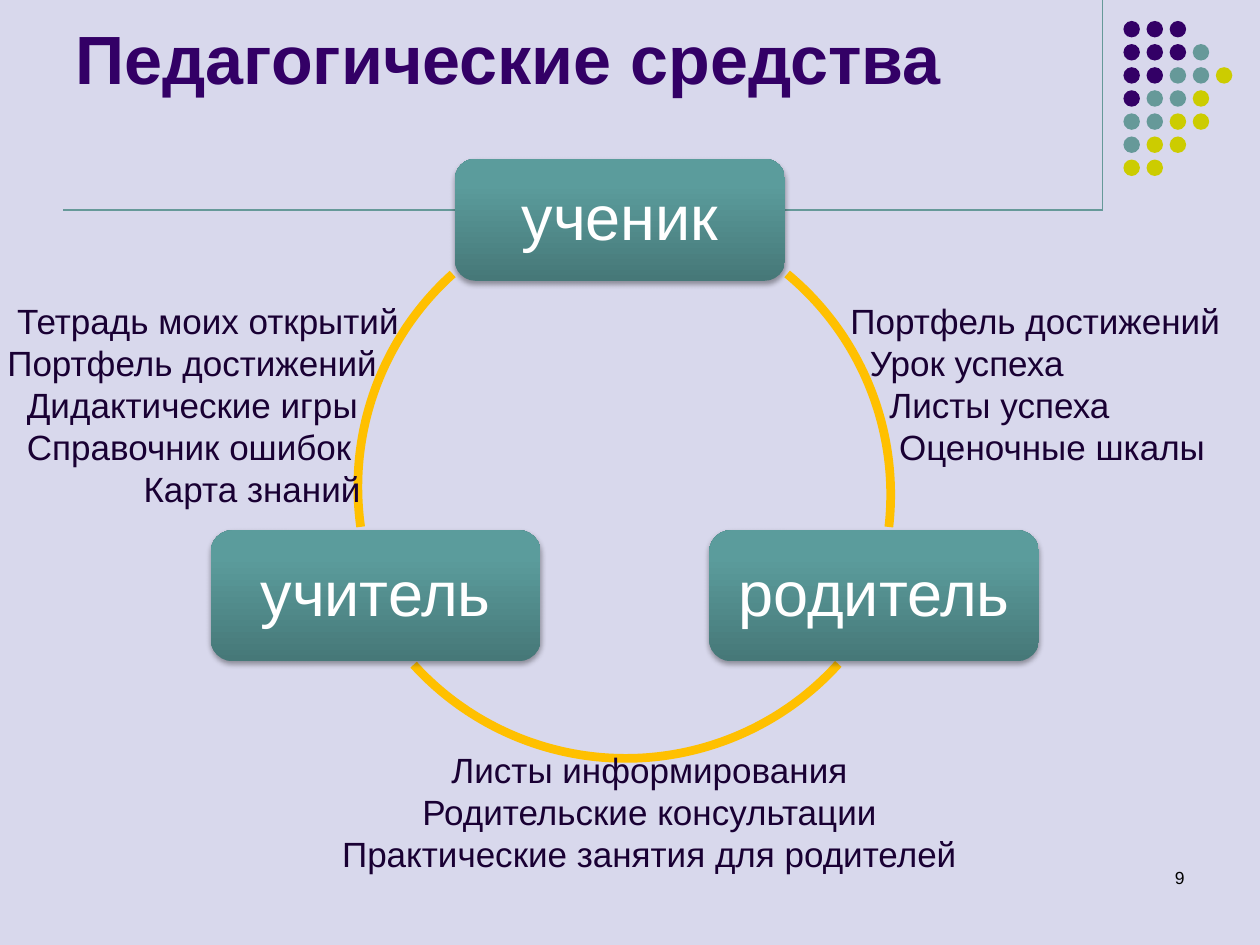
from lxml.etree import SubElement
from pptx import Presentation
from pptx.dml.color import RGBColor
from pptx.enum.shapes import MSO_CONNECTOR, MSO_SHAPE
from pptx.enum.text import MSO_ANCHOR, PP_ALIGN
from pptx.oxml.ns import qn
from pptx.util import Pt


def color(value):
    return RGBColor.from_string(value)


class SlideBuilder:
    FONT = "Arial"
    PURPLE, TEAL, LIME = "330066", "669999", "CCCC00"
    BODY, RING, BACKGROUND = "190033", "FFC000", "D8D8EC"
    SPACE_WIDTH = 5.56

    def __init__(self, presentation):
        self.slide = presentation.slides.add_slide(presentation.slide_layouts[6])
        fill = self.slide.background.fill
        fill.solid()
        fill.fore_color.rgb = color(self.BACKGROUND)

    def style(self, paragraph, size, ink, align=PP_ALIGN.LEFT, bold=False):
        paragraph.alignment = align
        font = paragraph.font
        font.name, font.size, font.bold = self.FONT, Pt(size), bold
        font.color.rgb = color(ink)

    def shape(self, kind, left, top, width, height):
        shape = self.slide.shapes.add_shape(kind, Pt(left), Pt(top), Pt(width), Pt(height))
        shape.shadow.inherit = False
        return shape

    def line(self, x1, y1, x2, y2):
        connector = self.slide.shapes.add_connector(
            MSO_CONNECTOR.STRAIGHT, Pt(x1), Pt(y1), Pt(x2), Pt(y2))
        connector.line.color.rgb = color(self.TEAL)
        connector.line.width = Pt(0.75)
        SubElement(connector._element.spPr, qn("a:effectLst"))

    def dot(self, left, top, ink):
        shape = self.shape(MSO_SHAPE.OVAL, left, top, 9.4, 9.4)
        shape.fill.solid()
        shape.fill.fore_color.rgb = color(ink)
        shape.line.fill.background()

    def arc(self, center_x, center_y, radius, start, end):
        shape = self.shape(MSO_SHAPE.ARC, center_x - radius, center_y - radius,
                           2 * radius, 2 * radius)
        for index, angle in enumerate((start, end)):
            shape.adjustments[index] = angle * 0.6
        shape.fill.background()
        shape.line.color.rgb = color(self.RING)
        shape.line.width = Pt(5)

    def role(self, label, left, top, height):
        shape = self.shape(MSO_SHAPE.ROUNDED_RECTANGLE, left, top, 188.6, height)
        shape.line.fill.background()
        shape.fill.gradient()
        shape.fill.gradient_angle = 90
        stops = zip(shape.fill.gradient_stops, ((0, "467878"), (0.8, "5B9C9C")))
        for stop, (position, ink) in stops:
            stop.position = position
            stop.color.rgb = color(ink)
        self.cast_shadow(shape)
        frame = shape.text_frame
        frame.word_wrap = True
        frame.vertical_anchor = MSO_ANCHOR.MIDDLE
        frame.margin_left = frame.margin_right = Pt(10.8)
        frame.margin_top = frame.margin_bottom = Pt(10.8)
        paragraph = frame.paragraphs[0]
        paragraph.text = label
        paragraph.line_spacing = 0.9
        self.style(paragraph, 36, "FFFFFF", PP_ALIGN.CENTER)

    def cast_shadow(self, shape):
        effects = shape._element.spPr.find(qn("a:effectLst"))
        shadow = SubElement(effects, qn("a:outerShdw"), blurRad=str(Pt(3.1)),
                            dist=str(Pt(1.8)), dir="5400000", rotWithShape="0")
        ink = SubElement(shadow, qn("a:srgbClr"), val="000000")
        SubElement(ink, qn("a:alpha"), val="35000")

    def text(self, lines, left, top, width, height, size=20, ink=BODY,
             align=PP_ALIGN.LEFT, bold=False, anchor=MSO_ANCHOR.TOP, pitch=None):
        box = self.slide.shapes.add_textbox(Pt(left), Pt(top), Pt(width), Pt(height))
        frame = box.text_frame
        frame.word_wrap = True
        frame.vertical_anchor = anchor
        for index, (indent, line) in enumerate(lines):
            paragraph = frame.add_paragraph() if index else frame.paragraphs[0]
            paragraph.text = line
            self.style(paragraph, size, ink, align, bold)
            if pitch:
                paragraph.line_spacing = Pt(pitch)
            if indent:
                margin = Pt(indent * self.SPACE_WIDTH)
                paragraph._p.get_or_add_pPr().set("marL", str(margin))


def main():
    presentation = Presentation()
    presentation.slide_width, presentation.slide_height = Pt(720), Pt(540)
    builder = SlideBuilder(presentation)

    builder.line(630, 0, 630, 120)
    builder.line(36, 120, 630, 120)
    inks = {"P": builder.PURPLE, "T": builder.TEAL, "L": builder.LIME}
    rows = ("PPP", "PPPT", "PPTTL", "PTTL", "TTLL", "TLL", "LL")
    for row, pattern in enumerate(rows):
        for column, key in enumerate(pattern):
            builder.dot(642 + 13.2 * column, 12 + 13.2 * row, inks[key])

    builder.text([(0, "Педагогические средства")], 36, 9.4, 594, 50.4, size=39,
                 ink=builder.PURPLE, bold=True, anchor=MSO_ANCHOR.BOTTOM)

    for center_x, center_y, start, end in (
            (345.2, 282.6, 309.7, 6.5),
            (357.5, 269.6, 42.1, 137.7),
            (368.3, 278.3, 172, 228)):
        builder.arc(center_x, center_y, 163.8, start, end)
    for label, left, top, height in (
            ("ученик", 260, 90.7, 69.8),
            ("родитель", 405.2, 303, 74.9),
            ("учитель", 120.4, 303, 74.9)):
        builder.role(label, left, top, height)

    builder.text([(3, "Портфель достижений"), (5, "Урок успеха"),
                  (7, "Листы успеха"), (8, "Оценочные шкалы")],
                 462.2, 167.8, 278, 136, pitch=24)
    builder.text([(1, "Тетрадь моих открытий"), (0, "Портфель достижений"),
                  (2, "Дидактические игры"), (2, "Справочник ошибок"),
                  (14, "Карта знаний")],
                 -2.9, 167.8, 289.4, 164, pitch=24)
    builder.text([(0, "Листы информирования"), (0, "Родительские консультации"),
                  (0, "Практические занятия для родителей")],
                 144, 424, 454.3, 81.4, align=PP_ALIGN.CENTER, pitch=24)
    builder.text([(0, "9")], 516.2, 491.8, 167.8, 36, size=10, ink="000000",
                 align=PP_ALIGN.RIGHT)
    presentation.save("out.pptx")


if __name__ == "__main__":
    main()
